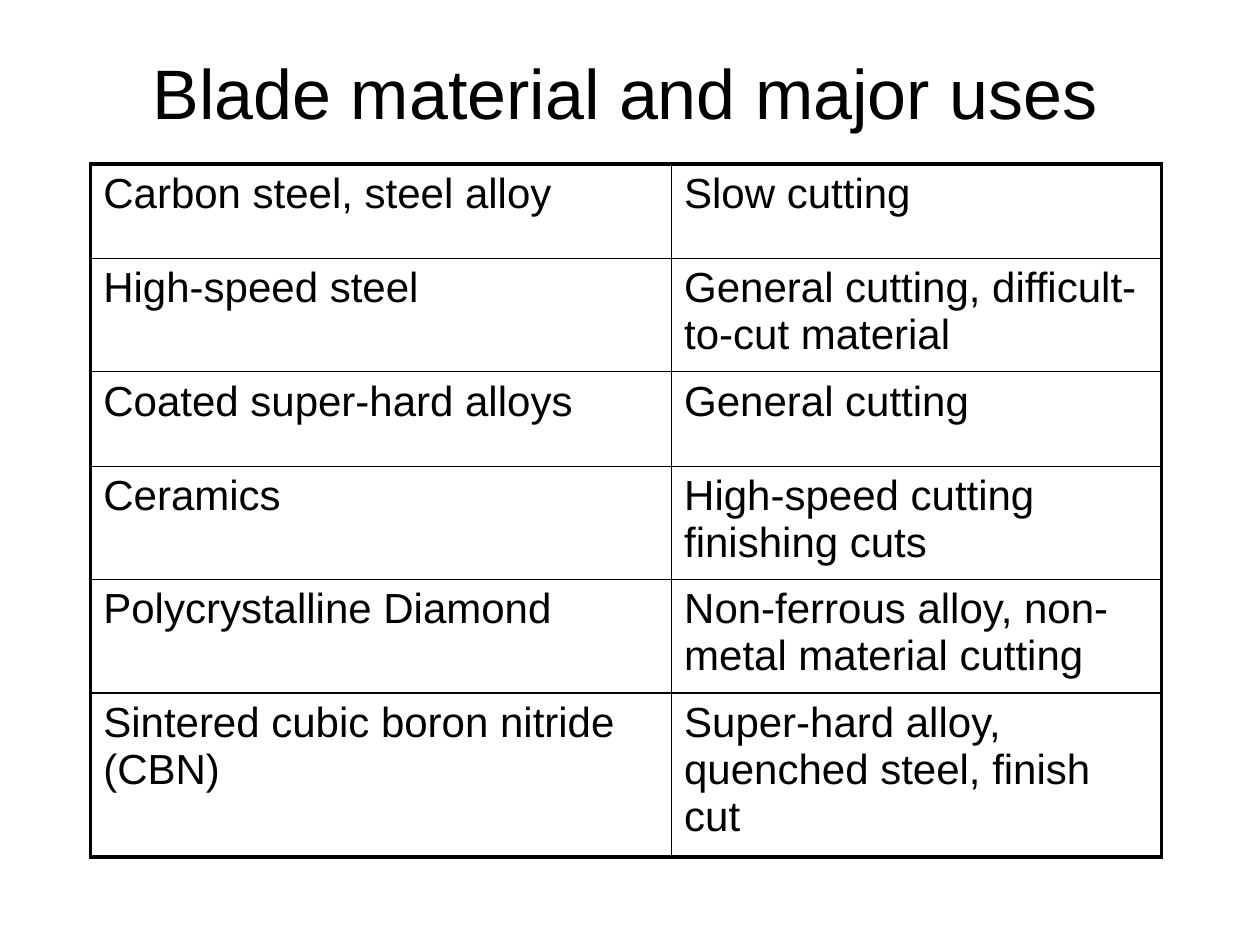
from lxml.etree import SubElement
from pptx import Presentation
from pptx.dml.color import RGBColor
from pptx.enum.text import MSO_ANCHOR, PP_ALIGN
from pptx.oxml.ns import qn
from pptx.util import Inches, Pt

BLACK = "000000"
THIN, THICK = 1, 2.25
USES = [
    ("Carbon steel, steel alloy", "Slow cutting"),
    ("High-speed steel", "General cutting, difficult-to-cut material"),
    ("Coated super-hard alloys", "General cutting"),
    ("Ceramics", "High-speed cutting finishing cuts"),
    ("Polycrystalline Diamond", "Non-ferrous alloy, non-metal material cutting"),
    ("Sintered cubic boron nitride (CBN)", "Super-hard alloy, quenched steel, finish cut"),
]
COLUMN_WIDTHS = (4.61, 3.89)
ROW_HEIGHT = 0.75


def write(para, text, size):
    span = para.add_run()
    span.text = text
    for name, value in {"name": "Arial", "size": Pt(size)}.items():
        setattr(span.font, name, value)
    span.font.color.rgb = RGBColor.from_string(BLACK)


def add_border(cell, side, width):
    line = SubElement(cell._tc.get_or_add_tcPr(), qn(f"a:{side}"), w=str(Pt(width)))
    fill = SubElement(line, qn("a:solidFill"))
    SubElement(fill, qn("a:srgbClr"), val=BLACK)


deck = Presentation()
deck.slide_width, deck.slide_height = Inches(10), Inches(7.5)
page = deck.slides.add_slide(deck.slide_layouts[6])

# Title
box = page.shapes.add_textbox(Inches(0.71), Inches(0.36), Inches(8.5), Inches(0.73))
frame = box.text_frame
for name, value in {"word_wrap": True, "vertical_anchor": MSO_ANCHOR.MIDDLE}.items():
    setattr(frame, name, value)
frame.paragraphs[0].alignment = PP_ALIGN.CENTER
write(frame.paragraphs[0], "Blade material and major uses", 40)

# Table of materials and uses; rows grow with their text
table = page.shapes.add_table(
    len(USES), len(COLUMN_WIDTHS), Inches(0.72), Inches(1.3),
    Inches(sum(COLUMN_WIDTHS)), Inches(ROW_HEIGHT * len(USES)),
).table
table.first_row = table.horz_banding = False
for column, width in zip(table.columns, COLUMN_WIDTHS):
    column.width = Inches(width)

# Cells: thick outer frame, thin inner rules
for row, texts in enumerate(USES):
    table.rows[row].height = Inches(ROW_HEIGHT)
    for column, text in enumerate(texts):
        cell = table.cell(row, column)
        write(cell.text_frame.paragraphs[0], text, 24)
        outer_sides = {
            "lnL": column == 0,
            "lnR": column == len(texts) - 1,
            "lnT": row == 0,
            "lnB": row == len(USES) - 1,
        }
        for side, is_outer in outer_sides.items():
            add_border(cell, side, THICK if is_outer else THIN)
        cell.fill.background()

deck.save("out.pptx")
